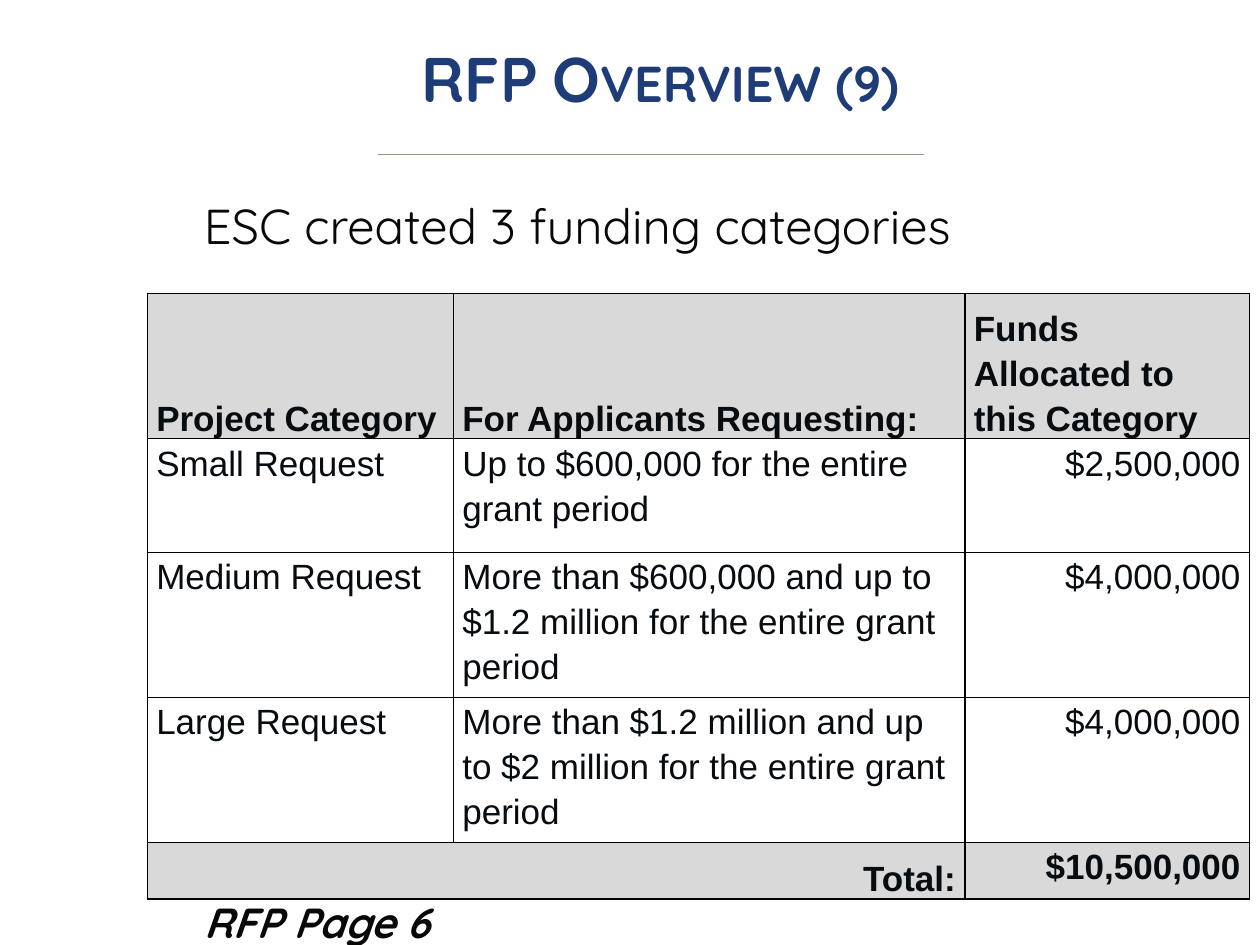
from lxml import etree
from pptx import Presentation
from pptx.dml.color import RGBColor
from pptx.enum import shapes, text
from pptx.oxml.ns import qn
from pptx.util import Cm, Pt

INK, GREY, BLACK = "070C11", "D9D9D9", "000000"
LEFT, RIGHT = text.PP_ALIGN.LEFT, text.PP_ALIGN.RIGHT
TOP, BASE = text.MSO_ANCHOR.TOP, text.MSO_ANCHOR.BOTTOM
WIDTHS = [6.17, 10.31, 5.74]
HEIGHTS = [2.29, 2.29, 2.84, 2.84, 1.14]
ROWS = [
    ["Project Category", "For Applicants Requesting:",
     "Funds Allocated to this Category"],
    ["Small Request", "Up to $600,000 for the entire grant period",
     "$2,500,000"],
    ["Medium Request",
     "More than $600,000 and up to $1.2 million for the entire grant period",
     "$4,000,000"],
    ["Large Request",
     "More than $1.2 million and up to $2 million for the entire grant period",
     "$4,000,000"],
    ["Total:", "", "$10,500,000"],
]


def color(code):
    return RGBColor.from_string(code)


def write(par, words, size, code, face="Quicksand", bold=False, slant=False):
    run = par.add_run()
    run.text = words
    font = run.font
    font.name, font.size = face, Pt(size)
    font.bold, font.italic = bold, slant
    font.color.rgb = color(code)
    return run


def add_box(slide, x, y, w, h):
    frame = slide.shapes.add_textbox(Cm(x), Cm(y), Cm(w), Cm(h)).text_frame
    frame.word_wrap = True
    return frame


def add_title(slide, x, y, w, h):
    frame = add_box(slide, x, y, w, h)
    frame.vertical_anchor = text.MSO_ANCHOR.MIDDLE
    frame.margin_left = Cm(1.37)
    frame.margin_top = frame.margin_bottom = 0
    par = frame.paragraphs[0]
    par.alignment = text.PP_ALIGN.CENTER
    run = write(par, "RFP Overview (9)", 36, "1E3C78", bold=True)
    run.font._element.set("cap", "small")
    rule = slide.shapes.add_connector(
        shapes.MSO_CONNECTOR.STRAIGHT,
        Cm(x + 6.3), Cm(y + h), Cm(x + 17.3), Cm(y + h))
    rule.line.color.rgb = color("A0937C")
    rule.line.width = Pt(0.75)
    etree.SubElement(rule._element.spPr, qn("a:effectLst"))


def add_note(slide, x, y, w, h, words, size, **style):
    par = add_box(slide, x, y, w, h).paragraphs[0]
    write(par, words, size, "090807", **style)


def add_edges(cell):
    props = cell._tc.get_or_add_tcPr()
    for spot, side in enumerate(("lnL", "lnR", "lnT", "lnB")):
        edge = etree.Element(qn("a:" + side), w=str(Pt(1)))
        fill = etree.SubElement(edge, qn("a:solidFill"))
        etree.SubElement(fill, qn("a:srgbClr"), val=BLACK)
        props.insert(spot, edge)


def fill_cell(cell, words, shade, bold, align, anchor):
    cell.margin_left = cell.margin_right = Cm(0.18)
    cell.margin_top = cell.margin_bottom = 0
    cell.vertical_anchor = anchor
    if shade:
        cell.fill.solid()
        cell.fill.fore_color.rgb = color(GREY)
    else:
        cell.fill.background()
    add_edges(cell)
    if words:
        par = cell.text_frame.paragraphs[0]
        par.alignment = align
        par.line_spacing = 1.15
        write(par, words, 20, INK, "Arial", bold)


def add_funds(slide, x, y):
    grid = slide.shapes.add_table(
        len(ROWS), len(WIDTHS), Cm(x), Cm(y),
        Cm(sum(WIDTHS)), Cm(sum(HEIGHTS))).table
    grid.first_row = grid.horz_banding = False
    for col, width in zip(grid.columns, WIDTHS):
        col.width = Cm(width)
    for row, height in zip(grid.rows, HEIGHTS):
        row.height = Cm(height)
    last = len(ROWS) - 1
    grid.cell(last, 0).merge(grid.cell(last, 1))
    for r, row in enumerate(ROWS):
        strong = r in (0, last)
        for c, words in enumerate(row):
            align = RIGHT if r == last or (r and c == 2) else LEFT
            low = r == 0 or (r == last and c < 2)
            fill_cell(grid.cell(r, c), words, strong, strong, align,
                      BASE if low else TOP)


def main():
    deck = Presentation()
    deck.slide_width, deck.slide_height = Cm(25.4), Cm(19.05)
    slide = deck.slides.add_slide(deck.slide_layouts[6])
    add_title(slide, 1.32, 0, 22.86, 3.12)
    add_note(slide, 3.86, 3.81, 20.32, 1.5,
             "ESC created 3 funding categories", 28)
    add_funds(slide, 2.97, 5.92)
    add_note(slide, 3.86, 17.95, 20.32, 1.1, "RFP Page 6", 24,
             bold=True, slant=True)
    deck.save("out.pptx")


if __name__ == "__main__":
    main()
